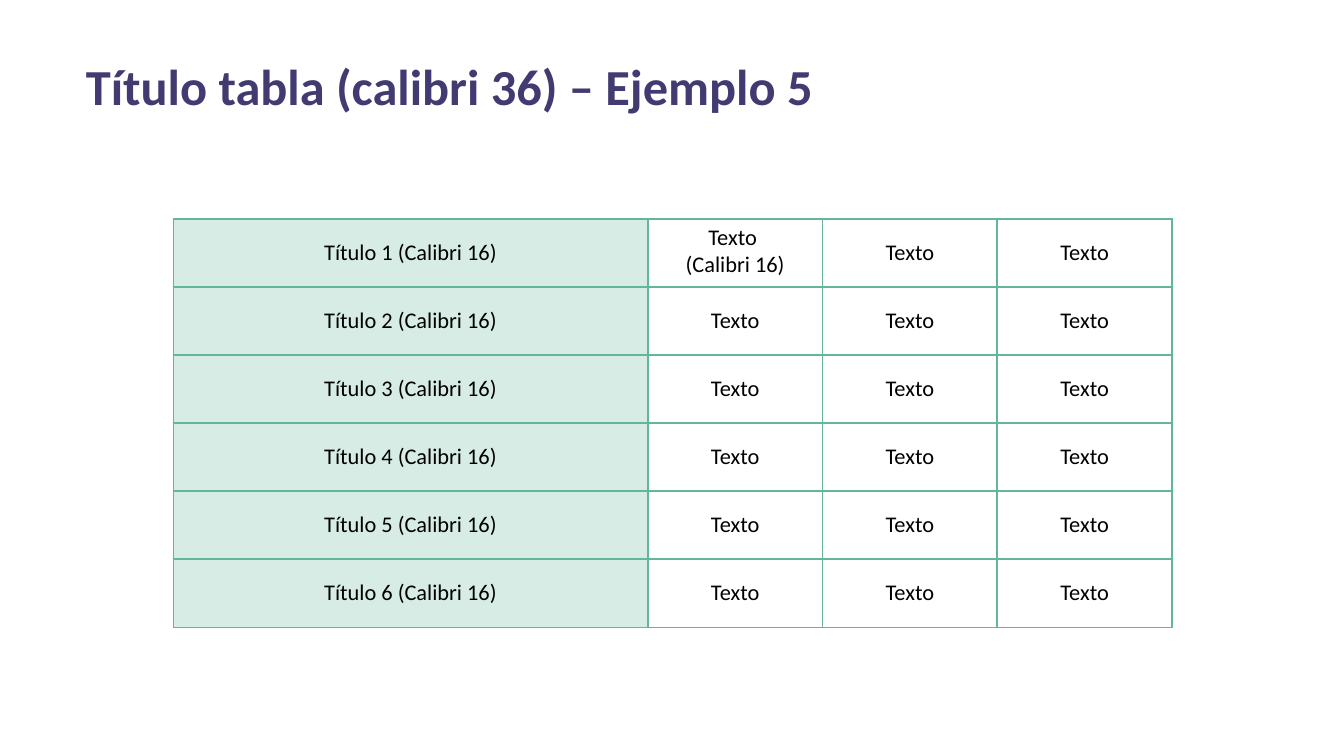
from dataclasses import dataclass

from lxml.etree import SubElement
from pptx import Presentation
from pptx.dml.color import RGBColor
from pptx.enum.text import MSO_ANCHOR as Anchor, MSO_AUTO_SIZE as Fit, PP_ALIGN as Align
from pptx.oxml.ns import qn
from pptx.util import Inches, Pt

HUES = {"title": "423B71", "text": "000000", "green": "63B799"}
SIDES = ("lnL", "lnR", "lnT", "lnB")
WIDTHS = (3.53, 1.3, 1.3, 1.3)
ROWS = 6
HIGH = 3.04
WIDE = Inches(10)
TITLE = {"name": "Calibri", "size": Pt(27), "bold": True}
BODY = {"name": "Calibri", "size": Pt(12), "bold": False}


@dataclass
class Entry:
    text: str
    tint: bool = False
    anchor: Anchor = Anchor.MIDDLE


def apply(item, values: dict) -> None:
    for key, value in values.items():
        setattr(item, key, value)


def pads(side: float, end: float) -> dict:
    return {
        "margin_left": Inches(side), "margin_right": Inches(side),
        "margin_top": Inches(end), "margin_bottom": Inches(end),
    }


def style(para, font: dict, hue: str, align: Align) -> None:
    para.alignment = align
    apply(para.font, font)
    para.font.color.rgb = RGBColor.from_string(HUES[hue])


def border(cell) -> None:
    props = cell._tc.get_or_add_tcPr()
    for side in SIDES:
        line = SubElement(props, qn(f"a:{side}"), w=str(Pt(1)))
        fill = SubElement(line, qn("a:solidFill"))
        SubElement(fill, qn("a:srgbClr"), val=HUES["green"])


def tint(cell) -> None:
    cell.fill.solid()
    cell.fill.fore_color.rgb = RGBColor.from_string(HUES["green"])
    color = cell._tc.tcPr.find(qn("a:solidFill")).find(qn("a:srgbClr"))
    SubElement(color, qn("a:alpha"), val="25000")


def draw(cell, entry: Entry) -> None:
    cell.text = entry.text
    apply(cell, pads(0.08, 0.04) | {"vertical_anchor": entry.anchor})
    border(cell)
    if entry.tint:
        tint(cell)
    else:
        cell.fill.background()
    for para in cell.text_frame.paragraphs:
        style(para, BODY, "text", Align.CENTER)


def grid(slide, rows: list[list[Entry]]) -> None:
    frame = slide.shapes.add_table(
        len(rows), len(WIDTHS), Inches(1.29), Inches(1.63),
        Inches(sum(WIDTHS)), Inches(HIGH))
    table = frame.table
    apply(table, {"first_row": False, "horz_banding": False})
    for col, width in zip(table.columns, WIDTHS):
        col.width = Inches(width)
    for line, row in zip(table.rows, rows):
        line.height = Inches(HIGH / len(rows))
        for cell, entry in zip(line.cells, row):
            draw(cell, entry)


def title(slide, text: str) -> None:
    box = slide.shapes.add_textbox(Inches(0.57), Inches(0.37), Inches(5.8), Inches(0.53))
    frame = box.text_frame
    apply(frame, pads(0.07, 0.04) | {"word_wrap": True, "auto_size": Fit.SHAPE_TO_FIT_TEXT})
    frame.text = text
    style(frame.paragraphs[0], TITLE, "title", Align.LEFT)


def main() -> None:
    deck = Presentation()
    apply(deck, {"slide_width": WIDE, "slide_height": WIDE * 9 // 16})
    slide = deck.slides.add_slide(deck.slide_layouts[6])
    rows = [
        [Entry(f"Título {num} (Calibri 16)", True)] + [Entry("Texto") for _ in WIDTHS[1:]]
        for num in range(1, ROWS + 1)
    ]
    rows[0][1] = Entry("Texto \n(Calibri 16)", anchor=Anchor.TOP)
    grid(slide, rows)
    title(slide, "Título tabla (calibri 36) – Ejemplo 5")
    deck.save("out.pptx")


if __name__ == "__main__":
    main()
